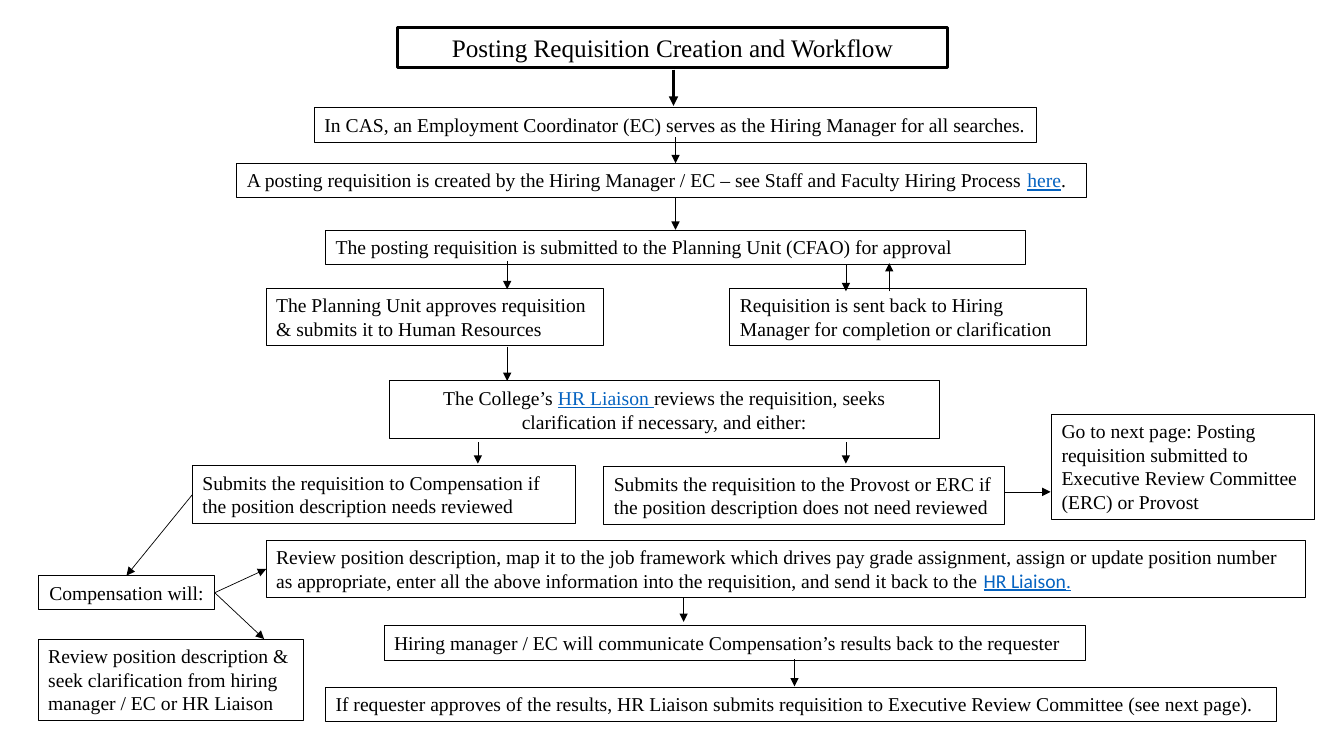
from pptx import Presentation
from pptx.dml.color import RGBColor
from pptx.enum.shapes import MSO_CONNECTOR
from pptx.enum.text import MSO_AUTO_SIZE, PP_ALIGN
from pptx.oxml.ns import qn
from pptx.util import Pt
from lxml import etree

BLACK = RGBColor(0x00, 0x00, 0x00)
BLUE = RGBColor(0x05, 0x63, 0xC1)
STRAIGHT = MSO_CONNECTOR.STRAIGHT
LEFT, CENTER = PP_ALIGN.LEFT, PP_ALIGN.CENTER
GROW = MSO_AUTO_SIZE.SHAPE_TO_FIT_TEXT
TOP_SIDE, LEFT_SIDE, RIGHT_SIDE = 0, 1, 3
PX = 9144
LINK = {"underline": True, "color": BLUE}
CALIBRI_LINK = {**LINK, "name": "Calibri"}


class Flowchart:
    """Draws bordered text boxes and arrows on one slide."""

    def __init__(self, slide, font="Times New Roman", color=BLACK):
        self.s = slide
        self.font = font
        self.color = color

    def box(self, at, *paragraphs, size=14, border=0.75, align=LEFT, wrap=True):
        sp = self.s.shapes.add_textbox(*(v * PX for v in at))
        sp.line.color.rgb = self.color
        sp.line.width = Pt(border)
        tf = sp.text_frame
        tf.word_wrap = wrap
        tf.auto_size = GROW
        for i, runs in enumerate(paragraphs):
            p = tf.add_paragraph() if i else tf.paragraphs[0]
            p.alignment = align
            for run in [(runs, {})] if isinstance(runs, str) else runs:
                self.run(p, size, *run)
        return sp

    def run(self, p, size, text, style):
        r = p.add_run()
        r.text = text
        style = {"name": self.font, "size": Pt(size), "color": self.color, **style}
        r.font.color.rgb = style.pop("color")
        for key, value in style.items():
            setattr(r.font, key, value)

    def arrow(self, x1, y1, x2, y2, width=0.5, begin=None, end=None):
        c = self.s.shapes.add_connector(STRAIGHT, *(v * PX for v in (x1, y1, x2, y2)))
        c.line.color.rgb = self.color
        c.line.width = Pt(width)
        etree.SubElement(c.line._get_or_add_ln(), qn("a:tailEnd"), type="triangle")
        etree.SubElement(c._element.spPr, qn("a:effectLst"))
        if begin:
            c.begin_connect(*begin)
        if end:
            c.end_connect(*end)


def main():
    prs = Presentation()
    prs.slide_width, prs.slide_height = 1333 * PX, 750 * PX
    chart = Flowchart(prs.slides.add_slide(prs.slide_layouts[6]))

    chart.box((394, 27, 546, 40), "Posting Requisition Creation and Workflow",
              size=18, border=2.25, align=CENTER)
    chart.box((312, 107, 716, 34),
              "In CAS, an Employment Coordinator (EC) serves as the Hiring Manager for all searches.",
              wrap=False)
    chart.box((235, 162, 843, 34), [
        ("A posting requisition is created by the Hiring Manager / EC – see Staff and Faculty Hiring Process ", {}),
        ("here", LINK), (".", {})])
    planning = chart.box(
        (323, 228, 694, 34),
        "The posting requisition is submitted to the Planning Unit (CFAO) for approval", border=0.25)
    chart.box((264, 286, 335, 57), "The Planning Unit approves requisition",
              "& submits it to Human Resources", wrap=False)
    chart.box((724, 286, 354, 57),
              "Requisition is sent back to Hiring Manager for completion or clarification")
    chart.box((386, 378, 546, 57), [
        ("The College’s ", {}), ("HR Liaison ", LINK),
        ("reviews the requisition, seeks clarification if necessary, and either:", {})], align=CENTER)
    to_compensation = chart.box(
        (191, 462, 380, 57),
        "Submits the requisition to Compensation if the position description needs reviewed")
    chart.box((599, 463, 397, 57),
              "Submits the requisition to the Provost or ERC if the position description does not need reviewed")
    chart.box((1043, 411, 261, 104),
              "Go to next page: Posting requisition submitted to Executive Review Committee (ERC) or Provost")
    compensation = chart.box((38, 571, 175, 34), "Compensation will:", align=CENTER)
    mapping = chart.box((264, 536, 1031, 57), [
        ("Review position description, map it to the job framework which drives pay grade assignment, "
         "assign or update position number as appropriate, enter all the above information into the "
         "requisition, and send it back to the ", {}),
        ("HR Liaison", CALIBRI_LINK), (".", LINK)])
    chart.box((38, 634, 263, 81),
              "Review position description & seek clarification from hiring manager / EC or HR Liaison")
    chart.box((381, 621, 696, 34),
              "Hiring manager / EC will communicate Compensation’s results back to the requester")
    chart.box((323, 682, 943, 34),
              "If requester approves of the results, HR Liaison submits requisition to "
              "Executive Review Committee (see next page).")

    chart.arrow(668, 69, 668, 105, width=2.25)
    chart.arrow(670, 196, 670, 228, end=(planning, TOP_SIDE))
    for x, y1, y2 in [(670, 136, 162), (503, 259, 287), (839, 262, 289), (882, 289, 261),
                      (503, 344, 378), (474, 439, 460), (839, 439, 460),
                      (678, 593, 617), (788, 654, 681)]:
        chart.arrow(x, y1, x, y2)
    chart.arrow(996, 488, 1042, 488)
    chart.arrow(191, 491, 125, 571, begin=(to_compensation, LEFT_SIDE), end=(compensation, TOP_SIDE))
    chart.arrow(213, 588, 264, 565, begin=(compensation, RIGHT_SIDE), end=(mapping, LEFT_SIDE))
    chart.arrow(213, 588, 262, 634, begin=(compensation, RIGHT_SIDE))

    prs.save("out.pptx")


if __name__ == "__main__":
    main()
